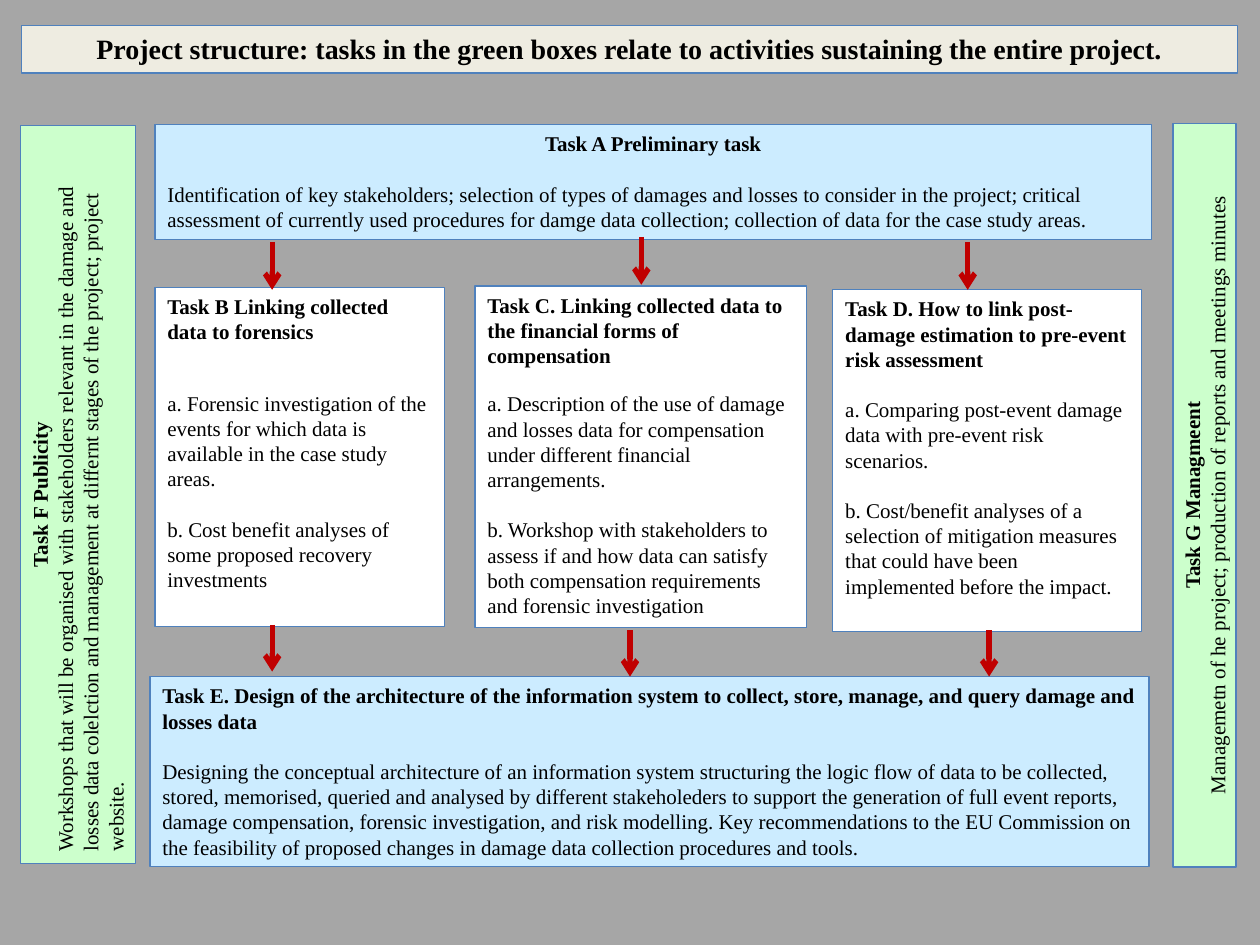
import pptx
import pptx.util
import pptx.dml.color
import pptx.enum.shapes
import pptx.enum.text
import pptx.oxml.ns
import lxml.etree

Inches = pptx.util.Inches
Pt = pptx.util.Pt
LEFT = pptx.enum.text.PP_ALIGN.LEFT
CENTER = pptx.enum.text.PP_ALIGN.CENTER

BLUE, GREEN, WHITE, BEIGE = "CCECFF", "CCFFCC", "FFFFFF", "EEECE1"
BORDER, ARROW, BACKGROUND, BLACK = "4F81BD", "C00000", "A6A6A6", "000000"
GAP = 14.4


def color(value):
    return pptx.dml.color.RGBColor.from_string(value)


def add_box(slide, frame, fill, paragraphs, size=12, rotation=0):
    """Draw a bordered box; its first paragraph is the bold heading.

    Each paragraph is (text, alignment, space before in points).
    """
    shape = slide.shapes.add_shape(
        pptx.enum.shapes.MSO_SHAPE.RECTANGLE, *[Inches(value) for value in frame])
    shape.rotation = rotation
    shape.shadow.inherit = False
    shape.fill.solid()
    shape.fill.fore_color.rgb = color(fill)
    shape.line.color.rgb = color(BORDER)
    shape.line.width = Pt(0.75)
    text_frame = shape.text_frame
    text_frame.word_wrap = True
    text_frame.vertical_anchor = pptx.enum.text.MSO_ANCHOR.TOP
    for index, (text, alignment, space) in enumerate(paragraphs):
        paragraph = text_frame.paragraphs[0] if index == 0 else text_frame.add_paragraph()
        paragraph.alignment = alignment
        if space:
            paragraph.space_before = Pt(space)
        run = paragraph.add_run()
        run.text = text
        run.font.name = "Times New Roman"
        run.font.size = Pt(size)
        run.font.bold = index == 0
        run.font.color.rgb = color(BLACK)


presentation = pptx.Presentation()
presentation.slide_width = Inches(10)
presentation.slide_height = Inches(7.5)
slide = presentation.slides.add_slide(presentation.slide_layouts[6])
slide.background.fill.solid()
slide.background.fill.fore_color.rgb = color(BACKGROUND)

# Title
add_box(slide, (0.17, 0.2, 9.65, 0.38), BEIGE, [
    ("Project structure: tasks in the green boxes relate to activities "
     "sustaining the entire project.", CENTER, 0),
], size=16)

# Tasks A to E, from top to bottom
add_box(slide, (1.23, 0.99, 7.91, 0.91), BLUE, [
    ("Task A Preliminary task", CENTER, 0),
    ("Identification of key stakeholders; selection of types of damages and losses to "
     "consider in the project; critical assessment of currently used procedures for damge "
     "data collection; collection of data for the case study areas.", LEFT, GAP),
])
add_box(slide, (1.23, 2.28, 2.3, 2.69), WHITE, [
    ("Task B Linking collected data to forensics", LEFT, 0),
    ("a. Forensic investigation of the events for which data is available in the case "
     "study areas.", LEFT, 26.6),
    ("b. Cost benefit analyses of some proposed recovery investments", LEFT, GAP),
])
add_box(slide, (3.77, 2.27, 2.63, 2.71), WHITE, [
    ("Task C. Linking collected data to the financial forms of compensation", LEFT, 0),
    ("a. Description of the use of damage and losses data for compensation under "
     "different financial arrangements.", LEFT, 13.2),
    ("b. Workshop with stakeholders to assess if and how data can satisfy both "
     "compensation requirements and forensic investigation", LEFT, GAP),
])
add_box(slide, (6.61, 2.3, 2.45, 2.71), WHITE, [
    ("Task D. How to link post-damage estimation to pre-event risk assessment", LEFT, 0),
    ("a. Comparing post-event damage data with pre-event risk scenarios.", LEFT, GAP),
    ("b. Cost/benefit analyses of a selection of mitigation measures that could have "
     "been implemented before the impact.", LEFT, GAP),
])
add_box(slide, (1.19, 5.37, 7.93, 1.51), BLUE, [
    ("Task E. Design of the architecture of the information system to collect, store, "
     "manage, and query damage and losses data", LEFT, 0),
    ("Designing the conceptual architecture of an information system structuring the "
     "logic flow of data to be collected, stored, memorised, queried and analysed by "
     "different stakeholeders to support the generation of full event reports, damage "
     "compensation, forensic investigation, and risk modelling. Key recommendations to "
     "the EU Commission on the feasibility of proposed changes in damage data collection "
     "procedures and tools.", LEFT, GAP),
])

# Sustaining tasks, turned to read upwards along the sides
add_box(slide, (-2.31, 3.47, 5.86, 0.91), GREEN, [
    ("Task F Publicity", CENTER, 0),
    ("Workshops that will be organised with stakeholders relevant in the damage and "
     "losses data colelction and management at differnt stages of the project; project "
     "website.", LEFT, 0),
], rotation=270)
add_box(slide, (6.61, 3.68, 5.9, 0.5), GREEN, [
    ("Task G Managmeent", CENTER, 0),
    ("Managemetn of he project; production of reports and meetings minutes", CENTER, 0),
], rotation=270)

# Arrows: x, top, bottom
arrows = [
    (2.16, 1.92, 2.3), (5.09, 1.88, 2.26), (7.68, 1.92, 2.3),
    (2.16, 4.96, 5.33), (5, 5, 5.37), (7.85, 5, 5.37),
]
for x, top, bottom in arrows:
    connector = slide.shapes.add_connector(
        pptx.enum.shapes.MSO_CONNECTOR.STRAIGHT,
        Inches(x), Inches(top), Inches(x), Inches(bottom))
    connector.line.color.rgb = color(ARROW)
    connector.line.width = Pt(3)
    line = connector.line._get_or_add_ln()
    lxml.etree.SubElement(line, pptx.oxml.ns.qn("a:tailEnd"), type="arrow")
    lxml.etree.SubElement(connector._element.spPr, pptx.oxml.ns.qn("a:effectLst"))

presentation.save("out.pptx")
